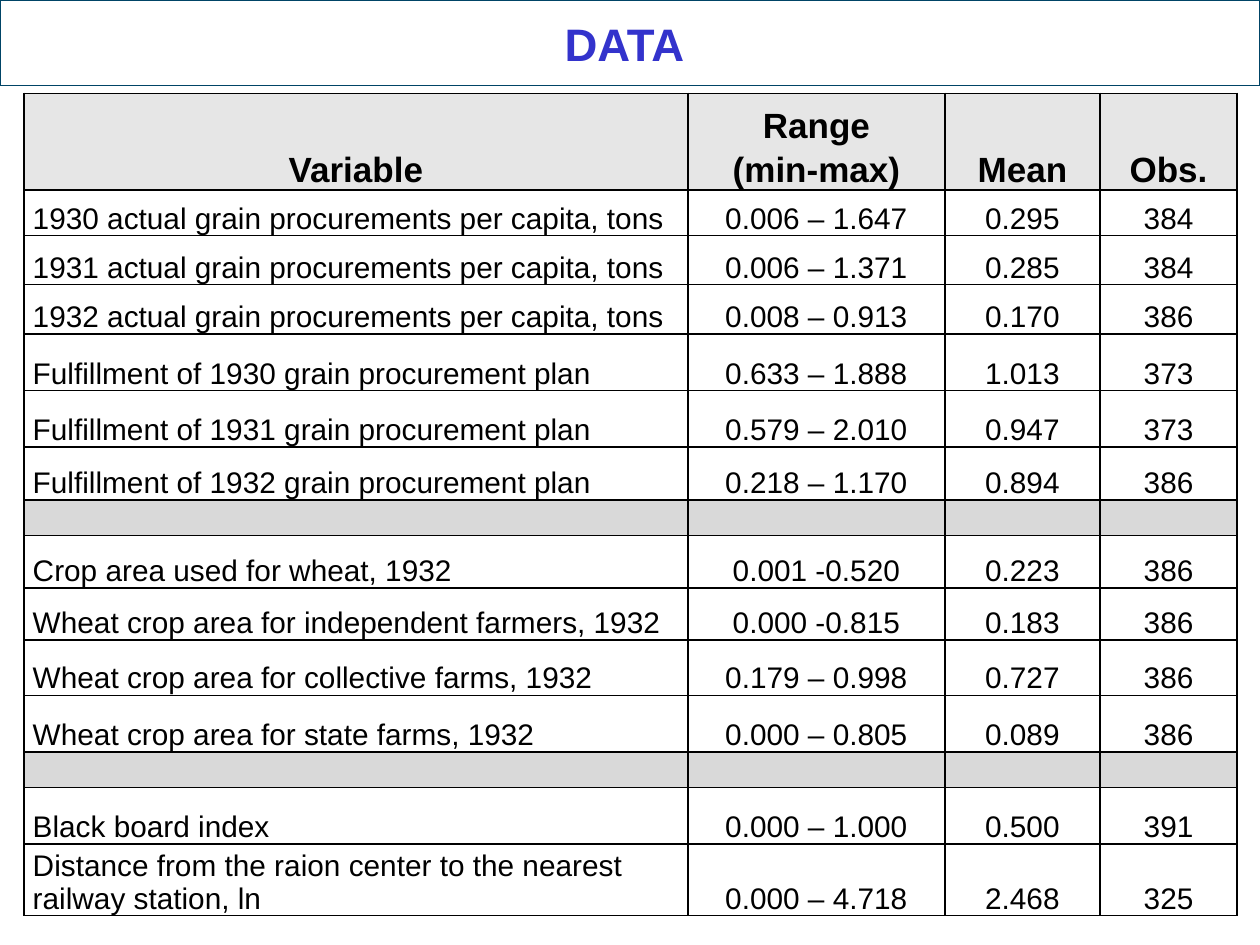
from dataclasses import dataclass

from lxml.etree import SubElement
from pptx import Presentation
from pptx.dml.color import RGBColor
from pptx.enum.shapes import MSO_SHAPE
from pptx.enum.text import MSO_ANCHOR as Anchor, PP_ALIGN as Align
from pptx.oxml.ns import qn
from pptx.util import Inches, Pt

COLORS = {
    "white": "FFFFFF", "black": "000000", "title": "3333CC",
    "frame": "004466", "header": "E6E6E6", "spacer": "D9D9D9",
}
COL_WIDTHS = (5.27, 2.04, 1.23, 1.09)


@dataclass(frozen=True)
class Row:
    height: float
    texts: tuple[str, ...] = ("", "", "", "")
    fill: str = "white"
    size: int = 17
    bold: bool = False
    inset: float = 0.07
    label_align: Align = Align.LEFT
    label_spacing: float = 1.15


SPACER = Row(0.28, fill="spacer", inset=0, label_spacing=1)
ROWS = (
    Row(0.77, ("Variable", "Range\n(min-max)", "Mean", "Obs."),
        "header", 20, True, 0.05, Align.CENTER),
    Row(0.36, ("1930 actual grain procurements per capita, tons", "0.006 – 1.647", "0.295", "384")),
    Row(0.39, ("1931 actual grain procurements per capita, tons", "0.006 – 1.371", "0.285", "384")),
    Row(0.39, ("1932 actual grain procurements per capita, tons", "0.008 – 0.913", "0.170", "386")),
    Row(0.45, ("Fulfillment of 1930 grain procurement plan", "0.633 – 1.888", "1.013", "373")),
    Row(0.45, ("Fulfillment of 1931 grain procurement plan", "0.579 – 2.010", "0.947", "373")),
    Row(0.42, ("Fulfillment of 1932 grain procurement plan", "0.218 – 1.170", "0.894", "386")),
    SPACER,
    Row(0.42, ("Crop area used for wheat, 1932", "0.001 -0.520", "0.223", "386")),
    Row(0.41, ("Wheat crop area for independent farmers, 1932", "0.000 -0.815", "0.183", "386")),
    Row(0.44, ("Wheat crop area for collective farms, 1932", "0.179 – 0.998", "0.727", "386")),
    Row(0.45, ("Wheat crop area for state farms, 1932", "0.000 – 0.805", "0.089", "386")),
    SPACER,
    Row(0.45, ("Black board index", "0.000 – 1.000", "0.500", "391")),
    Row(0.57, ("Distance from the raion center to the nearest railway station, ln",
               "0.000 – 4.718", "2.468", "325"), label_spacing=1),
)


def rgb(name: str) -> RGBColor:
    return RGBColor.from_string(COLORS[name])


def style_font(p, size: int, bold: bool, color: str) -> None:
    f = p.font
    f.name, f.size, f.bold = "Arial", Pt(size), bold
    f.color.rgb = rgb(color)


def add_borders(cell) -> None:
    tc_pr = cell._tc.get_or_add_tcPr()
    for i, side in enumerate(("lnL", "lnR", "lnT", "lnB")):
        ln = SubElement(tc_pr, qn(f"a:{side}"), w=str(Pt(1)))
        fill = SubElement(ln, qn("a:solidFill"))
        SubElement(fill, qn("a:srgbClr"), val=COLORS["black"])
        tc_pr.remove(ln)
        tc_pr.insert(i, ln)


def fill_cell(cell, row: Row, col: int) -> None:
    cell.fill.solid()
    cell.fill.fore_color.rgb = rgb(row.fill)
    cell.vertical_anchor = Anchor.BOTTOM
    cell.margin_left = cell.margin_right = Inches(row.inset)
    cell.margin_top = cell.margin_bottom = 0
    cell.text_frame.text = row.texts[col]
    for p in cell.text_frame.paragraphs:
        p.alignment = Align.CENTER if col else row.label_align
        if row is not SPACER:
            p.line_spacing = 1.15 if col else row.label_spacing
        style_font(p, row.size, row.bold, "black")
    add_borders(cell)


def add_title(s, text: str) -> None:
    sp = s.shapes.add_shape(MSO_SHAPE.RECTANGLE, 0, 0, Inches(10), Inches(0.68))
    sp.shadow.inherit = False
    sp.fill.solid()
    sp.fill.fore_color.rgb = rgb("white")
    sp.line.color.rgb = rgb("frame")
    sp.line.width = Pt(0.75)
    tf = sp.text_frame
    tf.word_wrap = False
    tf.vertical_anchor = Anchor.MIDDLE
    tf.text = text
    p = tf.paragraphs[0]
    p.alignment = Align.CENTER
    style_font(p, 26, True, "title")


def add_data_table(s, rows: tuple[Row, ...]) -> None:
    height = sum(row.height for row in rows)
    table = s.shapes.add_table(
        len(rows), len(COL_WIDTHS), Inches(0.19), Inches(0.74),
        Inches(sum(COL_WIDTHS)), Inches(height)).table
    table.horz_banding = False
    for column, width in zip(table.columns, COL_WIDTHS):
        column.width = Inches(width)
    for i, row in enumerate(rows):
        table.rows[i].height = Inches(row.height)
        for col in range(len(COL_WIDTHS)):
            fill_cell(table.cell(i, col), row, col)


def main() -> None:
    """Build the summary statistics slide."""
    prs = Presentation()
    prs.slide_width, prs.slide_height = Inches(10), Inches(7.5)
    s = prs.slides.add_slide(prs.slide_layouts[6])
    add_title(s, "DATA ")
    add_data_table(s, ROWS)
    prs.save("out.pptx")


if __name__ == "__main__":
    main()
